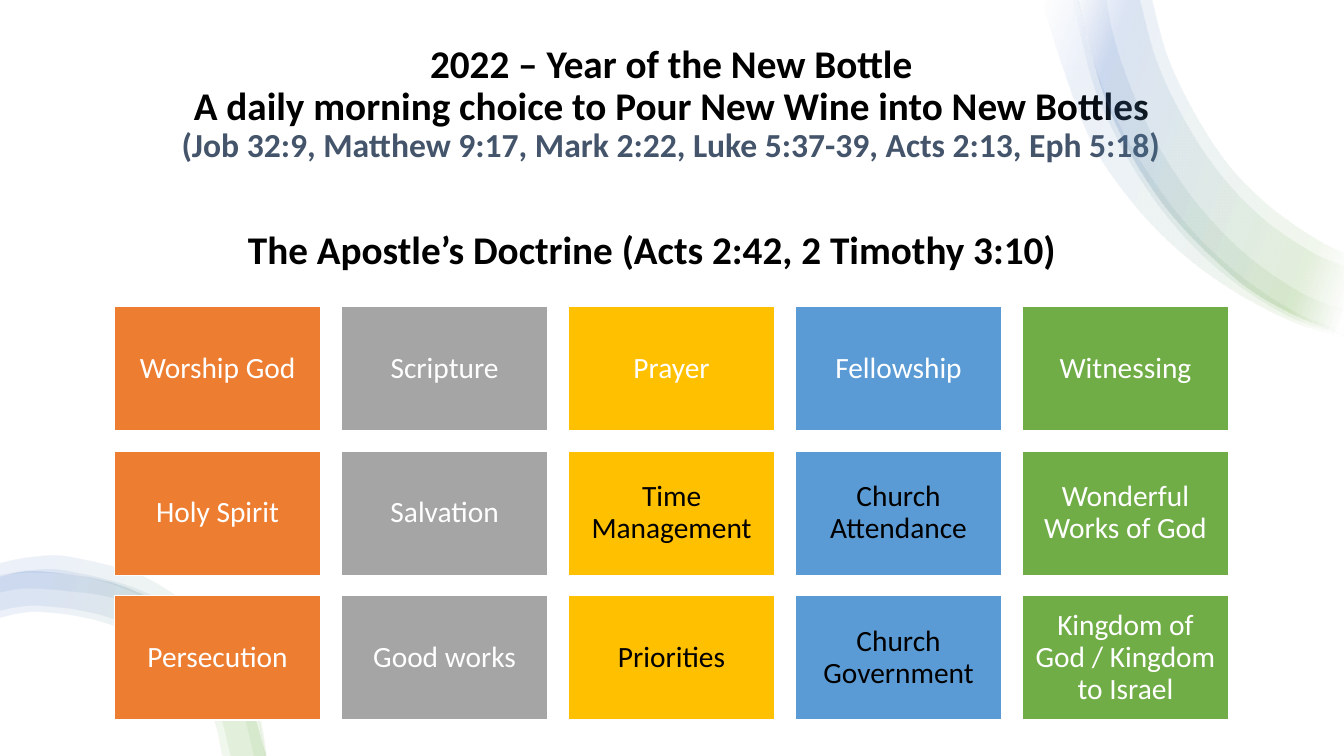
from lxml.etree import SubElement
from pptx import Presentation
from pptx.dml.color import RGBColor
from pptx.enum.shapes import MSO_SHAPE
from pptx.enum.text import MSO_ANCHOR, MSO_AUTO_SIZE, PP_ALIGN
from pptx.oxml.ns import qn
from pptx.util import Cm, Pt

WHITE = RGBColor(0xFF, 0xFF, 0xFF)
BLACK = RGBColor(0x00, 0x00, 0x00)
SLATE = RGBColor(0x44, 0x54, 0x6A)
ORANGE = RGBColor(0xED, 0x7D, 0x31)
GRAY = RGBColor(0xA5, 0xA5, 0xA5)
GOLD = RGBColor(0xFF, 0xC0, 0x00)
SKY = RGBColor(0x5B, 0x9B, 0xD5)
GREEN = RGBColor(0x70, 0xAD, 0x47)
BLUE = RGBColor(0x44, 0x72, 0xC4)

INCH = 2.54
RIBBON_STOPS = [(2, WHITE), (16, GREEN), (85, BLUE), (100, WHITE)]
RIBBON_OPACITY = 10
RIBBON_ANGLE = 200


def bend_edge(segments, start, anchors):
    padded = [start, start, *anchors, anchors[-1]]
    for segment, before, first, last, after in zip(
            segments, padded, padded[1:], padded[2:], padded[3:]):
        curve = segment.getparent().makeelement(qn("a:cubicBezTo"))
        controls = [
            [f + (l - b) / 6 for b, f, l in zip(before, first, last)],
            [l - (a - f) / 6 for f, l, a in zip(first, last, after)],
            last,
        ]
        for x, y in controls:
            SubElement(curve, qn("a:pt"), x=str(round(x)), y=str(round(y)))
        segment.getparent().replace(segment, curve)


def add_span(paragraph, text, **font_format):
    span = paragraph.add_run()
    span.text = text
    color = font_format.pop("color")
    for name, value in {"name": "Calibri", **font_format}.items():
        setattr(span.font, name, value)
    span.font.color.rgb = color


deck = Presentation()
deck.slide_width = Cm(33.87)
deck.slide_height = Cm(19.05)
page = deck.slides.add_slide(deck.slide_layouts[6])

backdrop = page.shapes.add_shape(MSO_SHAPE.RECTANGLE, 0, 0, deck.slide_width, deck.slide_height)
backdrop.shadow.inherit = False
backdrop.fill.solid()
backdrop.fill.fore_color.rgb = WHITE
backdrop.line.fill.background()

title = page.shapes.add_textbox(Cm(3.4), Cm(0), Cm(27.03), Cm(5.28))
title.text_frame.word_wrap = True
title.text_frame.vertical_anchor = MSO_ANCHOR.MIDDLE
paragraph = title.text_frame.paragraphs[0]
paragraph.alignment = PP_ALIGN.CENTER
paragraph.line_spacing = 0.9
for headline in ["2022 – Year of the New Bottle",
                 "A daily morning choice to Pour New Wine into New Bottles"]:
    add_span(paragraph, headline, size=Pt(28), bold=True, color=BLACK)
    paragraph.add_line_break()
add_span(paragraph, "(Job 32:9, Matthew 9:17, Mark 2:22, Luke 5:37-39, Acts 2:13, Eph 5:18)",
         size=Pt(24), bold=True, color=SLATE)

top_outer = [(13.33, 3.32), (12.77, 3.09), (12.23, 2.74), (11.52, 2), (11, 1.07), (10.67, -0.09)]
bottom_outer = [(2.63, 7.5), (2.36, 6.69), (1.85, 6.16), (1.17, 5.8), (0.4, 5.67), (0, 5.72)]
top_ribbons = [
    ([(13.33, 3.35), (12.82, 3.19), (12.21, 2.87), (11.65, 2.45),
      (11.16, 1.92), (10.78, 1.31), (10.41, 0.26), (10.36, -0.09)],
     [(10.68, -0.09), (10.82, 0.52), (11.06, 1.15), (11.4, 1.73),
      (11.81, 2.27), (12.3, 2.73), (12.86, 3.1), (13.33, 3.28)]),
    (top_outer,
     [(11.41, -0.09), (11.58, 0.55), (11.85, 1.12), (12.19, 1.64),
      (12.61, 2.06), (13.07, 2.38), (13.33, 2.51)]),
    ([(13.33, 3.33), (12.79, 3.14), (12.23, 2.79), (11.73, 2.33),
      (11.32, 1.79), (10.99, 1.19), (10.81, 0.71), (10.63, -0.09)],
     [(10.96, -0.09), (11.07, 0.44), (11.29, 1.04), (11.58, 1.6),
      (11.95, 2.11), (12.39, 2.55), (12.9, 2.9), (13.33, 3.08)]),
    (top_outer,
     [(11.29, -0.09), (11.47, 0.59), (11.75, 1.19), (12.1, 1.72),
      (12.53, 2.17), (13.01, 2.5), (13.33, 2.64)]),
]
bottom_ribbons = [
    (bottom_outer,
     [(0, 6.13), (0.4, 6.07), (1.07, 6.19), (1.66, 6.52), (2.06, 7), (2.2, 7.5)]),
    (bottom_outer,
     [(0, 6.06), (0.4, 6.01), (1.09, 6.13), (1.7, 6.47), (2.12, 6.97), (2.28, 7.5)]),
    ([(2.63, 7.5), (2.47, 6.85), (2.03, 6.27), (1.42, 5.87),
      (0.69, 5.67), (0.31, 5.66), (0, 5.71)],
     [(0, 5.88), (0.33, 5.84), (1.01, 5.91), (1.34, 6.03),
      (1.92, 6.39), (2.34, 6.91), (2.51, 7.5)]),
    ([(2.64, 7.5), (2.5, 6.87), (2.1, 6.23), (1.48, 5.75),
      (0.71, 5.53), (0.31, 5.53), (0, 5.59)],
     [(0, 5.72), (0.32, 5.68), (0.87, 5.73), (1.39, 5.91),
      (1.86, 6.2), (2.25, 6.58), (2.52, 7.05), (2.62, 7.5)]),
]
ribbons = [(*edges, RIBBON_STOPS) for edges in top_ribbons]
ribbons += [(*edges, RIBBON_STOPS[1:3]) for edges in bottom_ribbons]
for outer, inner, stops in ribbons:
    outline = [(Cm(INCH * x), Cm(INCH * y)) for x, y in outer + inner]
    builder = page.shapes.build_freeform(*outline[0])
    builder.add_line_segments(outline[1:], close=True)
    ribbon = builder.convert_to_shape()
    local = [(x - ribbon.left, y - ribbon.top) for x, y in outline]
    segments = list(ribbon.element.iter(qn("a:lnTo")))
    turn = len(outer)
    bend_edge(segments[:turn - 1], local[0], local[1:turn])
    bend_edge(segments[turn:], local[turn], local[turn + 1:])
    ribbon.shadow.inherit = False
    ribbon.line.fill.background()
    ribbon.fill.gradient()
    gradient = ribbon.element.spPr.find(qn("a:gradFill"))
    for child in list(gradient):
        gradient.remove(child)
    stop_list = SubElement(gradient, qn("a:gsLst"))
    for position, color in stops:
        stop = SubElement(stop_list, qn("a:gs"), pos=str(position * 1000))
        tint = SubElement(stop, qn("a:srgbClr"), val=str(color))
        SubElement(tint, qn("a:alpha"), val=str(RIBBON_OPACITY * 1000))
    SubElement(gradient, qn("a:lin"), ang=str(RIBBON_ANGLE * 60000), scaled="0")

columns = [
    (ORANGE, ["Worship God", "Holy Spirit", "Persecution"]),
    (GRAY, ["Scripture", "Salvation", "Good works"]),
    (GOLD, ["Prayer", "Time Management", "Priorities"]),
    (SKY, ["Fellowship", "Church Attendance", "Church Government"]),
    (GREEN, ["Witnessing", "Wonderful Works of God", "Kingdom of God / Kingdom to Israel"]),
]
card_frame = {
    "word_wrap": True,
    "vertical_anchor": MSO_ANCHOR.MIDDLE,
    "margin_left": Cm(0.23),
    "margin_right": Cm(0.23),
    "margin_top": Cm(0.23),
    "margin_bottom": Cm(0.23),
}
for row in range(3):
    for column, (color, topics) in enumerate(columns):
        card = page.shapes.add_shape(
            MSO_SHAPE.RECTANGLE, Cm(2.88 + 5.72 * column), Cm(7.73 + 3.64 * row), Cm(5.21), Cm(3.13))
        card.shadow.inherit = False
        card.fill.solid()
        card.fill.fore_color.rgb = color
        card.line.color.rgb = WHITE
        card.line.width = Pt(1)
        for name, value in card_frame.items():
            setattr(card.text_frame, name, value)
        paragraph = card.text_frame.paragraphs[0]
        paragraph.alignment = PP_ALIGN.CENTER
        paragraph.line_spacing = 0.9
        text_color = BLACK if row > 0 and color in (GOLD, SKY) else WHITE
        add_span(paragraph, topics[row], size=Pt(21), color=text_color)

doctrine = page.shapes.add_textbox(Cm(6), Cm(5.56), Cm(21.44), Cm(1.45))
doctrine.text_frame.word_wrap = True
doctrine.text_frame.auto_size = MSO_AUTO_SIZE.SHAPE_TO_FIT_TEXT
add_span(doctrine.text_frame.paragraphs[0], "The Apostle’s Doctrine (Acts 2:42, 2 Timothy 3:10)",
         size=Pt(28), bold=True, color=BLACK)

deck.save("out.pptx")
